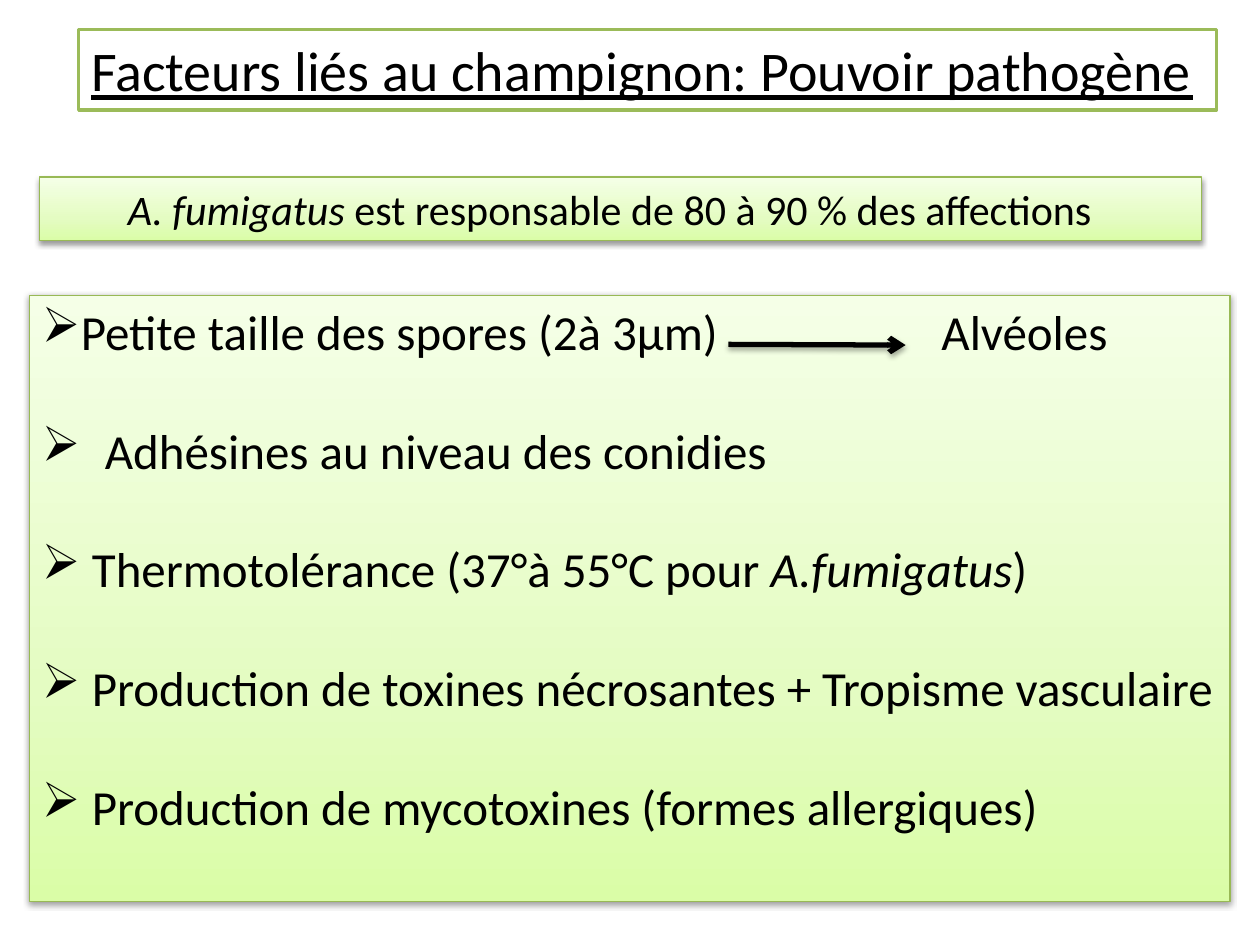
import copy

import pptx
import pptx.dml.color
import pptx.enum.shapes
import pptx.enum.text
import pptx.oxml
import pptx.oxml.ns
import pptx.util

Pt = pptx.util.Pt
RGB = pptx.dml.color.RGBColor.from_string

# Content: each paragraph is a list of (text, italic) spans
TITLE = [[("Facteurs liés au champignon: Pouvoir pathogène", False)]]
BANNER = [[("A. fumigatus ", True),
           ("est responsable de 80 à 90 % des affections", False)]]
FACTORS = [
    [("Petite taille des spores (2à 3µm)\tAlvéoles", False)],
    [("\tAdhésines au niveau des conidies", False)],
    [(" Thermotolérance (37°à 55°C pour ", False), ("A.fumigatus", True), (")", False)],
    [(" Production de toxines nécrosantes + Tropisme vasculaire", False)],
    [(" Production de mycotoxines (formes allergiques)", False)],
]
FACTOR_TABS = {0: 514, 1: 36}  # paragraph index: tab stop

COLORS = {"text": "000000", "white": "FFFFFF", "title_line": "9BBB59",
          "panel_line": "98B955"}
GRADIENT = [(0, "DAFDA7"), (0.35, "E4FCC2"), (1, "F5FFE7")]
FONT = "Calibri"
LINE_GAP = 34.2  # one empty line of 28 pt text


def element(xml):
    namespace = pptx.oxml.ns.nsdecls("a")
    return pptx.oxml.parse_xml(xml.replace(" ", f" {namespace} ", 1))


def add_shadow(shape, distance, opacity):
    properties = shape._element.spPr
    for old in properties.findall(pptx.oxml.ns.qn("a:effectLst")):
        properties.remove(old)
    properties.append(element(
        f'<a:effectLst ><a:outerShdw blurRad="{Pt(3.1)}" dist="{Pt(distance)}" '
        f'dir="5400000" rotWithShape="0"><a:srgbClr val="000000">'
        f'<a:alpha val="{opacity * 1000}"/></a:srgbClr></a:outerShdw></a:effectLst>'))


def add_box(page, bounds, line_color, line_width):
    box = page.shapes.add_shape(pptx.enum.shapes.MSO_SHAPE.RECTANGLE,
                                *[Pt(value) for value in bounds])
    box.shadow.inherit = False
    box.line.color.rgb = RGB(COLORS[line_color])
    box.line.width = Pt(line_width)
    return box


def add_panel(page, bounds):
    panel = add_box(page, bounds, "panel_line", 0.75)
    panel.fill.gradient()
    panel.fill.gradient_angle = 90
    stop_list = panel._element.spPr.find(".//" + pptx.oxml.ns.qn("a:gsLst"))
    stop_list.append(copy.deepcopy(stop_list[-1]))
    for stop, (position, color) in zip(panel.fill.gradient_stops, GRADIENT):
        stop.position = position
        stop.color.rgb = RGB(color)
    add_shadow(panel, 1.6, 38)
    return panel


def write(box, paragraphs, size, wrap=True, underline=False, bullet=None, tabs=None, gap=0):
    frame = box.text_frame
    frame.word_wrap = wrap
    frame.vertical_anchor = pptx.enum.text.MSO_ANCHOR.TOP
    frame.auto_size = pptx.enum.text.MSO_AUTO_SIZE.SHAPE_TO_FIT_TEXT
    for index, spans in enumerate(paragraphs):
        para = frame.paragraphs[0] if index == 0 else frame.add_paragraph()
        para.alignment = pptx.enum.text.PP_ALIGN.LEFT
        if index and gap:
            para.space_before = Pt(gap)
        settings = para._p.get_or_add_pPr()
        if bullet:
            settings.append(element(f'<a:buChar char="{bullet}"/>'))
        if tabs and index in tabs:
            settings.append(element(
                f'<a:tabLst ><a:tab pos="{Pt(tabs[index])}" algn="l"/></a:tabLst>'))
        para.font.name = FONT
        para.font.size = Pt(size)
        para.font.color.rgb = RGB(COLORS["text"])
        para.font.underline = underline
        for text, italic in spans:
            span = para.add_run()
            span.text = text
            if italic:
                span.font.italic = True


def main():
    deck = pptx.Presentation()
    deck.slide_width, deck.slide_height = Pt(720), Pt(540)
    page = deck.slides.add_slide(deck.slide_layouts[6])

    # Key message
    banner = add_panel(page, (22.5, 101.25, 664, 36.35))
    write(banner, BANNER, 24)
    banner.text_frame.margin_left = Pt(50.6)

    # Fungal factors
    factors = add_panel(page, (16.9, 168.75, 686, 346.5))
    write(factors, FACTORS, 28, bullet="➢", tabs=FACTOR_TABS, gap=LINE_GAP)

    # Arrow from spore size to alveoli
    arrow = page.shapes.add_connector(pptx.enum.shapes.MSO_CONNECTOR.STRAIGHT,
                                      Pt(416.2), Pt(196.8), Pt(517.5), Pt(197.2))
    arrow.line.color.rgb = RGB(COLORS["text"])
    arrow.line.width = Pt(3)
    arrow.line._get_or_add_ln().append(element('<a:tailEnd type="arrow"/>'))
    add_shadow(arrow, 1.8, 35)

    # Title
    title = add_box(page, (45, 16.9, 650.2, 46), "title_line", 2)
    title.fill.solid()
    title.fill.fore_color.rgb = RGB(COLORS["white"])
    write(title, TITLE, 32, wrap=False, underline=True)

    deck.save("out.pptx")


if __name__ == "__main__":
    main()
